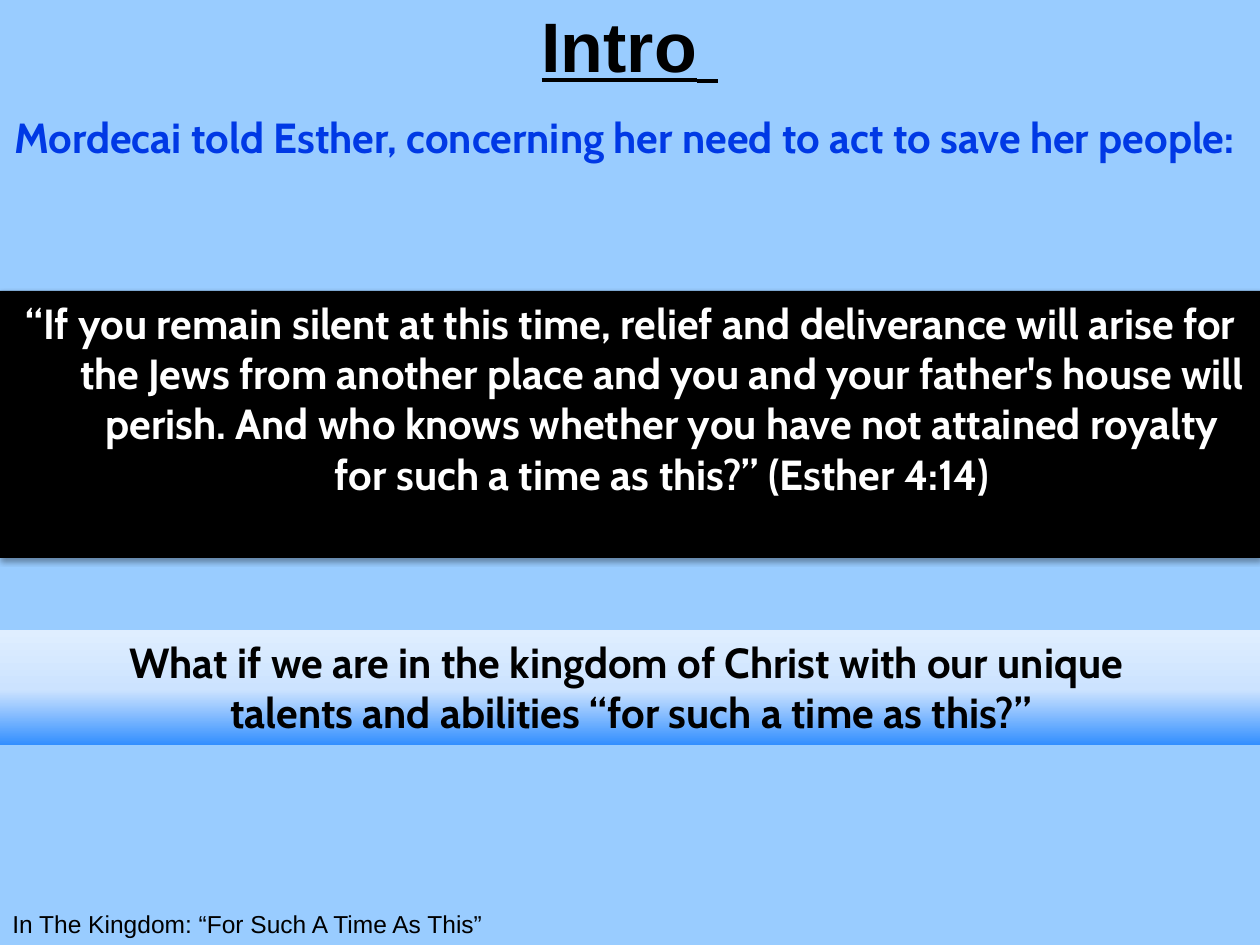
from lxml.etree import SubElement
from pptx import Presentation
from pptx.dml.color import RGBColor
from pptx.enum.shapes import MSO_SHAPE
from pptx.enum.text import MSO_ANCHOR, MSO_AUTO_SIZE, PP_ALIGN
from pptx.oxml.ns import qn
from pptx.util import Emu, Pt

EMU_PER_PX = 914400 / 126

SKY = RGBColor(0x99, 0xCC, 0xFF)
BLACK = RGBColor(0, 0, 0)
WHITE = RGBColor(0xFF, 0xFF, 0xFF)
ROYAL = RGBColor(0x00, 0x39, 0xE5)
QUESTION_STOPS = (
    (0, RGBColor(0x33, 0x8F, 0xFF)),
    (48, RGBColor(0xCC, 0xE3, 0xFF)),
    (100, RGBColor(0xDF, 0xEE, 0xFF)),
)


def px(length):
    return Emu(round(length * EMU_PER_PX))


class SlideBuilder:
    heading_font = "Arial"
    body_font = "Cabin"
    body_size = 24
    hang = 63

    def __init__(self, presentation, background):
        self.slide = presentation.slides.add_slide(presentation.slide_layouts[5])
        self.slide.background.fill.solid()
        self.slide.background.fill.fore_color.rgb = background

    def style(self, font, name, size, color, bold=False):
        font.name = name
        font.size = Pt(size)
        font.color.rgb = color
        font.bold = bold

    def title(self, box, pieces):
        heading = self.slide.shapes.title
        heading.left, heading.top, heading.width, heading.height = map(px, box)
        frame = heading.text_frame
        frame.auto_size = MSO_AUTO_SIZE.NONE
        frame.vertical_anchor = MSO_ANCHOR.MIDDLE
        line = frame.paragraphs[0]
        line.alignment = PP_ALIGN.CENTER
        for words, size in pieces:
            run = line.add_run()
            run.text = words
            self.style(run.font, self.heading_font, size, BLACK, True)
            run.font.underline = True

    def footer(self, box, words):
        frame = self.slide.shapes.add_textbox(*map(px, box)).text_frame
        frame.word_wrap = True
        frame.text = words
        self.style(frame.paragraphs[0].font, self.heading_font, 14, BLACK)

    def hanging_text(self, shape, lines, color):
        frame = shape.text_frame
        frame.word_wrap = True
        frame.auto_size = MSO_AUTO_SIZE.SHAPE_TO_FIT_TEXT
        frame.vertical_anchor = MSO_ANCHOR.TOP
        frame.text = "\n".join(lines)
        for paragraph in frame.paragraphs:
            paragraph.alignment = PP_ALIGN.CENTER
            properties = paragraph._p.get_or_add_pPr()
            properties.set("marL", str(px(self.hang)))
            properties.set("indent", str(-px(self.hang)))
            self.style(paragraph.font, self.body_font, self.body_size, color, True)

    def statement(self, box, lines, color):
        self.hanging_text(self.slide.shapes.add_textbox(*map(px, box)), lines, color)

    def band(self, box, lines, color):
        band = self.slide.shapes.add_shape(MSO_SHAPE.RECTANGLE, *map(px, box))
        band.shadow.inherit = False
        band.line.fill.background()
        self.hanging_text(band, lines, color)
        return band

    def solid_band(self, box, lines, fill, color):
        band = self.band(box, lines, color)
        band.fill.solid()
        band.fill.fore_color.rgb = fill
        effects = band._element.spPr.find(qn("a:effectLst"))
        shadow = SubElement(
            effects, qn("a:outerShdw"), blurRad=str(Pt(3.1)), dist=str(Pt(1.8)),
            dir="5400000", rotWithShape="0",
        )
        shade = SubElement(shadow, qn("a:srgbClr"), val=str(BLACK))
        SubElement(shade, qn("a:alpha"), val="35000")

    def gradient_band(self, box, lines, stops, color):
        band = self.band(box, lines, color)
        band.fill.gradient()
        band.fill.gradient_angle = 90
        stop_list = band._element.spPr.find(qn("a:gradFill")).find(qn("a:gsLst"))
        for preset in list(stop_list):
            stop_list.remove(preset)
        for position, shade in stops:
            stop = SubElement(stop_list, qn("a:gs"), pos=str(position * 1000))
            SubElement(stop, qn("a:srgbClr"), val=str(shade))


def main():
    presentation = Presentation()
    presentation.slide_width = px(1260)
    presentation.slide_height = px(945)

    intro = SlideBuilder(presentation, SKY)
    intro.title((0, 0, 1260, 84), (("Intro", 40), (" ", 44)))
    intro.footer((0, 903, 514, 42), "In The Kingdom: “For Such A Time As This”")
    intro.statement(
        (-1, 105, 1260, 115),
        ["Mordecai told Esther, concerning her need to act to save her people: "],
        ROYAL,
    )
    intro.solid_band(
        (0, 291, 1261, 267),
        ["“If you remain silent at this time, relief and deliverance will arise for "
         "the Jews from another place and you and your father's house will perish. "
         "And who knows whether you have not attained royalty for such a time as "
         "this?” (Esther 4:14)"],
        BLACK, WHITE,
    )
    intro.gradient_band(
        (0, 630, 1262, 115),
        ["What if we are in the kingdom of Christ with our unique ",
         "talents and abilities “for such a time as this?”"],
        QUESTION_STOPS, BLACK,
    )
    presentation.save("out.pptx")


if __name__ == "__main__":
    main()
